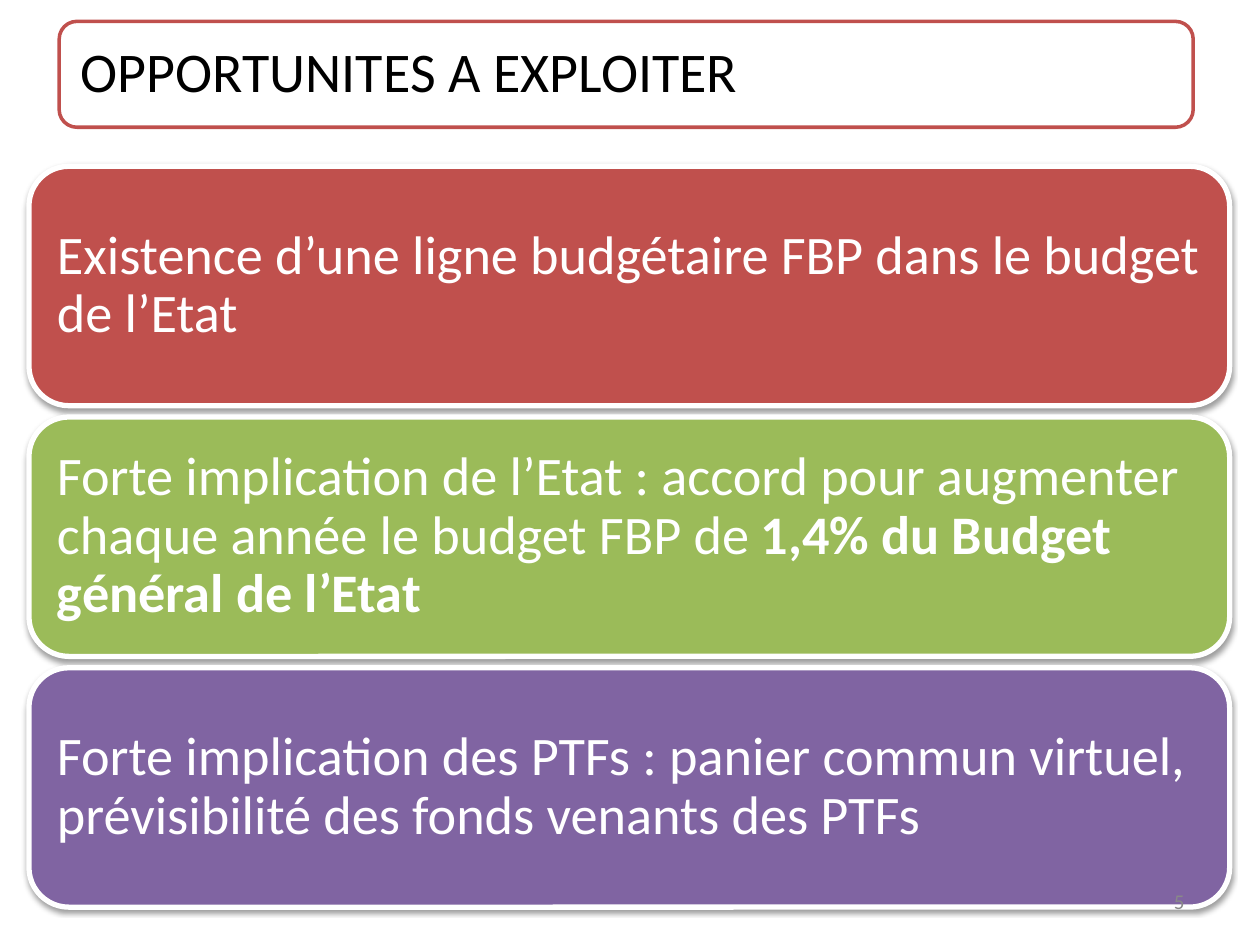
from dataclasses import dataclass

import pptx
import pptx.dml.color
import pptx.enum.shapes
import pptx.enum.text
import pptx.oxml
import pptx.oxml.ns
import pptx.util
from pptx.util import Inches

FONT = "Calibri"
WHITE = "FFFFFF"


@dataclass
class Opportunity:
    color: str
    text: str
    emphasis: str = ""


OPPORTUNITIES = [
    Opportunity("C0504D", "Existence d’une ligne budgétaire FBP dans le budget de l’Etat"),
    Opportunity(
        "9BBB59",
        "Forte implication de l’Etat : accord pour augmenter chaque année le budget FBP de ",
        "1,4% du Budget général de l’Etat",
    ),
    Opportunity(
        "8064A2",
        "Forte implication des PTFs : panier commun virtuel, "
        "prévisibilité des fonds venants des PTFs",
    ),
]


def rgb(color: str) -> pptx.dml.color.RGBColor:
    return pptx.dml.color.RGBColor.from_string(color)


def format_run(run, size: float, color: str, bold: bool = False) -> None:
    run.font.name = FONT
    run.font.size = pptx.util.Pt(size)
    run.font.color.rgb = rgb(color)
    run.font.bold = bold


def add_panel(slide, top: float, left: float, width: float, height: float,
              fill: str, line: str, line_width: float):
    """Add a rounded panel with left-aligned, vertically centred text."""
    panel = slide.shapes.add_shape(
        pptx.enum.shapes.MSO_SHAPE.ROUNDED_RECTANGLE,
        Inches(left), Inches(top), Inches(width), Inches(height),
    )
    panel.shadow.inherit = False
    panel.fill.solid()
    panel.fill.fore_color.rgb = rgb(fill)
    panel.line.color.rgb = rgb(line)
    panel.line.width = pptx.util.Pt(line_width)
    frame = panel.text_frame
    frame.word_wrap = True
    frame.vertical_anchor = pptx.enum.text.MSO_ANCHOR.MIDDLE
    frame.margin_left = frame.margin_right = Inches(0.13)
    frame.margin_top = frame.margin_bottom = Inches(0.13)
    paragraph = frame.paragraphs[0]
    paragraph.alignment = pptx.enum.text.PP_ALIGN.LEFT
    paragraph.line_spacing = 0.9
    return panel


def add_shadow(shape) -> None:
    effects = shape._element.spPr.find(pptx.oxml.ns.qn("a:effectLst"))
    effects.append(pptx.oxml.parse_xml(
        f'<a:outerShdw {pptx.oxml.ns.nsdecls("a")} blurRad="{pptx.util.Pt(3.1)}" '
        f'dist="{pptx.util.Pt(1.6)}" dir="5400000" rotWithShape="0">'
        '<a:srgbClr val="000000"><a:alpha val="38000"/></a:srgbClr></a:outerShdw>'
    ))


def add_opportunity(slide, opportunity: Opportunity, top: float, height: float) -> None:
    panel = add_panel(slide, top, 0.23, 9.53, height, opportunity.color, WHITE, 3)
    add_shadow(panel)
    paragraph = panel.text_frame.paragraphs[0]
    paragraph.text = opportunity.text
    format_run(paragraph.runs[0], 31, WHITE)
    if opportunity.emphasis:
        emphasis = paragraph.add_run()
        emphasis.text = opportunity.emphasis
        format_run(emphasis, 31, WHITE, bold=True)


def main() -> None:
    deck = pptx.Presentation()
    deck.slide_width, deck.slide_height = Inches(10), Inches(7.5)
    slide = deck.slides.add_slide(deck.slide_layouts[6])

    # Title
    title = add_panel(slide, 0.17, 0.47, 9, 0.84, WHITE, "C0504D", 2)
    heading = title.text_frame.paragraphs[0]
    heading.text = "OPPORTUNITES A EXPLOITER"
    format_run(heading.runs[0], 32, "000000")

    # Stacked opportunities
    first_top, height, pitch = 1.32, 1.9, 1.99
    for index, opportunity in enumerate(OPPORTUNITIES):
        add_opportunity(slide, opportunity, first_top + index * pitch, height)

    # Page number
    page_number = slide.shapes.add_textbox(
        Inches(7.17), Inches(6.95), Inches(2.33), Inches(0.4))
    frame = page_number.text_frame
    frame.word_wrap = True
    frame.vertical_anchor = pptx.enum.text.MSO_ANCHOR.MIDDLE
    frame.text = "5"
    frame.paragraphs[0].alignment = pptx.enum.text.PP_ALIGN.RIGHT
    format_run(frame.paragraphs[0].runs[0], 12, "898989")

    deck.save("out.pptx")


if __name__ == "__main__":
    main()
